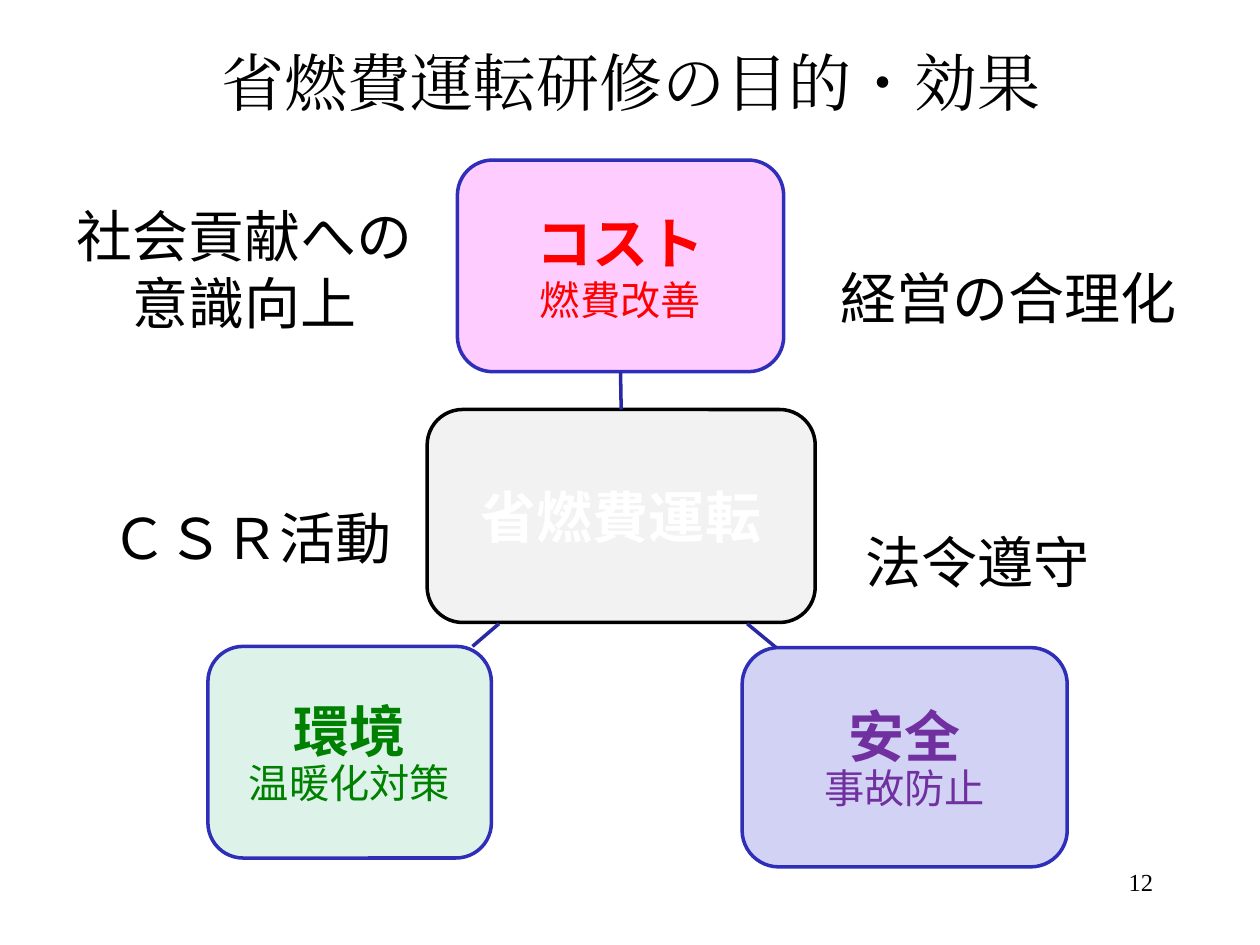
from dataclasses import dataclass

import pptx
import pptx.dml.color
import pptx.enum.shapes
import pptx.enum.text
import pptx.oxml
import pptx.oxml.ns
import pptx.util
from pptx.util import Inches

COLORS = {
    "black": "000000", "white": "FFFFFF", "gray": "F2F2F2",
    "pink": "FFCCFF", "red": "FF0000",
    "lavender": "D2D2F4", "purple": "7030A0",
    "mint": "DDF3EA", "green": "008000",
    "border": "2E2EB9", "link": "2929A3",
}
GOTHIC, SANS, SERIF = "Noto Sans CJK JP", "Arial", "Times New Roman"
ALIGN = pptx.enum.text.PP_ALIGN
ANCHOR = pptx.enum.text.MSO_ANCHOR


@dataclass
class Node:
    left: float
    top: float
    width: float
    height: float
    fill: str
    border: str
    ink: str
    heading: str
    detail: str = ""
    detail_spacing: float = 0.9


@dataclass
class Label:
    left: float
    top: float
    width: float
    height: float
    text: str
    font: str
    size: float = 32
    align: ALIGN = ALIGN.LEFT
    anchor: ANCHOR = ANCHOR.TOP


def color(name: str) -> pptx.dml.color.RGBColor:
    return pptx.dml.color.RGBColor.from_string(COLORS[name])


def write(para, text: str, font: str, size: float, ink: str,
          align: ALIGN, bold: bool = False) -> None:
    """Fill a paragraph, using one typeface for Latin and Japanese."""
    para.text = text
    para.alignment = align
    para.font.name = font
    para.font.size = pptx.util.Pt(size)
    para.font.bold = bold
    para.font.color.rgb = color(ink)
    for span in para.runs:
        properties = span.font._element
        east_asian = pptx.oxml.parse_xml(
            f'<a:ea {pptx.oxml.ns.nsdecls("a")} typeface="{font}"/>')
        properties.append(east_asian)


def add_node(page, node: Node):
    box = page.shapes.add_shape(
        pptx.enum.shapes.MSO_SHAPE.ROUNDED_RECTANGLE,
        Inches(node.left), Inches(node.top),
        Inches(node.width), Inches(node.height))
    box.shadow.inherit = False
    box.fill.solid()
    box.fill.fore_color.rgb = color(node.fill)
    box.line.color.rgb = color(node.border)
    box.line.width = pptx.util.Pt(2)
    frame = box.text_frame
    frame.word_wrap = True
    frame.vertical_anchor = ANCHOR.MIDDLE
    write(frame.paragraphs[0], node.heading, GOTHIC, 32, node.ink,
          ALIGN.CENTER, bold=True)
    if node.detail:
        para = frame.add_paragraph()
        write(para, node.detail, GOTHIC, 23, node.ink, ALIGN.CENTER)
        para.line_spacing = node.detail_spacing
        para.space_after = pptx.util.Pt(8)
    return box


def add_link(page, start: tuple[float, float], end: tuple[float, float]):
    link = page.shapes.add_connector(
        pptx.enum.shapes.MSO_CONNECTOR.STRAIGHT,
        *(Inches(value) for value in start + end))
    link.line.color.rgb = color("link")
    link.line.width = pptx.util.Pt(2)
    link._element.spPr.append(pptx.oxml.parse_xml(
        f'<a:effectLst {pptx.oxml.ns.nsdecls("a")}/>'))
    return link


def add_label(page, label: Label) -> None:
    box = page.shapes.add_textbox(
        Inches(label.left), Inches(label.top),
        Inches(label.width), Inches(label.height))
    box.text_frame.word_wrap = True
    box.text_frame.vertical_anchor = label.anchor
    write(box.text_frame.paragraphs[0], label.text, label.font, label.size,
          "black", label.align)


CENTER = Node(3.39, 3.25, 3.08, 1.69, "gray", "black", "white", "省燃費運転")
COST = Node(3.63, 1.27, 2.59, 1.68, "pink", "border", "red",
            "コスト", "燃費改善", 1.0)
SAFETY = Node(5.89, 5.14, 2.58, 1.74, "lavender", "border", "purple",
              "安全", "事故防止")
ENVIRONMENT = Node(1.65, 5.13, 2.25, 1.68, "mint", "border", "green",
                   "環境", "温暖化対策")
LABELS = [
    Label(0.51, 0.28, 9, 0.73, "省燃費運転研修の目的・効果", SERIF, 36,
          ALIGN.CENTER, ANCHOR.MIDDLE),
    Label(0.49, 1.55, 2.9, 1.18, "社会貢献への意識向上", SANS,
          align=ALIGN.CENTER),
    Label(6.57, 2.04, 2.95, 0.64, "経営の合理化", SANS),
    Label(0.79, 3.95, 2.56, 0.64, "ＣＳＲ活動", GOTHIC),
    Label(6.77, 4.14, 2.56, 0.64, "法令遵守", GOTHIC),
    Label(7.17, 6.83, 2.08, 0.5, "12", SERIF, 14, ALIGN.RIGHT),
]


def main() -> None:
    deck = pptx.Presentation()
    deck.slide_width, deck.slide_height = Inches(10), Inches(7.5)
    page = deck.slides.add_slide(deck.slide_layouts[6])

    # Central theme and its three goals
    center_box = add_node(page, CENTER)
    cost_box = add_node(page, COST)
    add_node(page, SAFETY)
    add_node(page, ENVIRONMENT)

    # Links from the centre to each goal
    cost_link = add_link(page, (4.93, 3.25), (4.93, 2.95))
    cost_link.begin_connect(center_box, 0)
    cost_link.end_connect(cost_box, 2)
    add_link(page, (5.93, 4.95), (6.16, 5.14))
    add_link(page, (3.96, 4.95), (3.75, 5.13))

    # Title, surrounding effects and page number
    for label in LABELS:
        add_label(page, label)

    deck.save("out.pptx")


if __name__ == "__main__":
    main()
